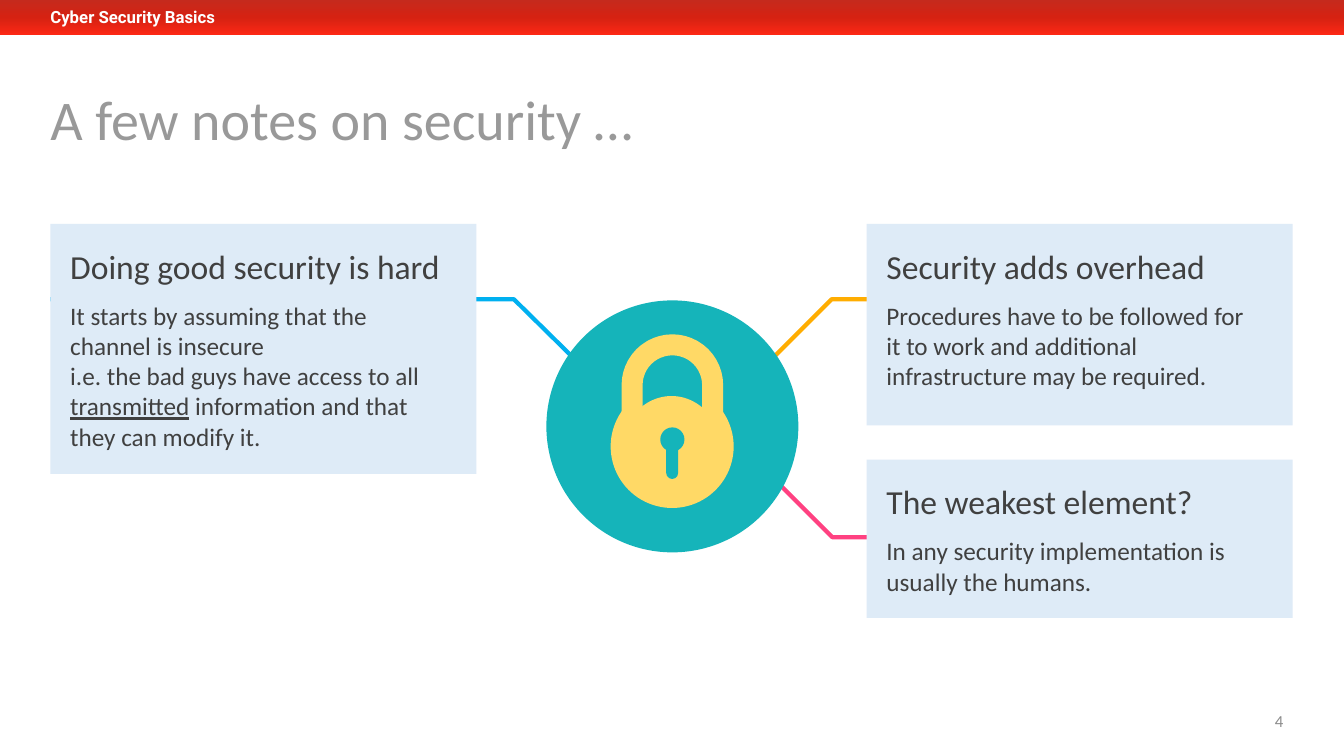
"""Build the slide of security notes around a padlock."""
from copy import deepcopy
from dataclasses import dataclass
from typing import Any, Optional

from pptx import Presentation
from pptx import slide as slides
from pptx import util as u
from pptx.dml import color
from pptx.enum import shapes, text
from pptx.oxml import ns
from pptx.shapes import autoshape, shapetree

Kind = shapes.MSO_SHAPE
Point = tuple[float, float]


@dataclass(frozen=True)
class Theme:
    body_font: str = "Calibri"
    header_font: str = "Roboto"
    bar: tuple[str, ...] = ("C52A1D", "D52212", "FD2815")
    title: str = "999999"
    ink: str = "404040"
    number: str = "8C8C8C"
    white: str = "FFFFFF"
    card: str = "DEEBF7"
    disc: str = "15B4BA"
    lock: str = "FFD966"
    title_size: int = 40
    heading_size: int = 24
    body_size: int = 18
    small_size: int = 12
    wire_width: int = 3
    shackle_width: int = 15


THEME = Theme()


@dataclass(frozen=True)
class Span:
    text: str
    underline: bool = False


@dataclass(frozen=True)
class Para:
    spans: tuple[Span, ...]
    size: int
    colour: str
    font: str = THEME.body_font
    bold: bool = False
    before: float = 0
    line_spacing: float = 1.0
    align: text.PP_ALIGN = text.PP_ALIGN.LEFT


@dataclass(frozen=True)
class Box:
    left: float
    top: float
    width: float
    height: float

    def lengths(self) -> tuple[u.Length, ...]:
        """Return the box as slide lengths."""
        return tuple(map(u.Cm, (self.left, self.top, self.width, self.height)))


@dataclass(frozen=True)
class Part:
    kind: Kind
    box: Box
    fill: Optional[str] = None
    rotation: float = 0
    rounding: Optional[float] = None
    outline: Optional[str] = None


@dataclass(frozen=True)
class Note:
    box: Box
    wire: tuple[Point, ...]
    colour: str
    heading: str
    body: tuple[Span, ...]


NOTES = (
    Note(Box(1.27, 5.64, 10.74, 6.3), ((1.27, 7.54), (12.95, 7.54), (14.99, 9.55)),
         "00B0F0", "Doing good security is hard",
         (Span("It starts by assuming that the channel is insecure \n"
               "i.e. the bad guys have access to all "),
          Span("transmitted", True),
          Span(" information and that they can modify it."))),
    Note(Box(21.84, 5.64, 10.74, 5.08), ((31.65, 7.54), (20.96, 7.54), (17.63, 10.87)),
         "FFAD01", "Security adds overhead",
         (Span("Procedures have to be followed for it to work and additional "
               "infrastructure may be required."),)),
    Note(Box(21.84, 11.58, 10.74, 3.99), ((31.65, 13.54), (20.98, 13.54), (17.65, 10.21)),
         "FF4181", "The weakest element?",
         (Span("In any security implementation is usually the humans."),)),
)

DISC = Part(Kind.OVAL, Box(13.77, 7.57, 6.35, 6.35), THEME.disc)
PADLOCK = (
    Part(Kind.ROUNDED_RECTANGLE, Box(15.93, 8.69, 2.03, 3.73),
         rounding=0.5, outline=THEME.lock),
    Part(Kind.OVAL, Box(15.67, 9.98, 2.51, 2.72), THEME.lock),
    Part(Kind.PIE, Box(15.39, 9.7, 3.1, 3.1), THEME.lock, rotation=315),
    Part(Kind.OVAL, Box(16.64, 10.77, 0.61, 0.61), THEME.disc),
    Part(Kind.ROUNDED_RECTANGLE, Box(16.79, 10.95, 0.3, 1.12), THEME.disc, rounding=0.5),
)


def assign(target: Any, values: dict[str, Any]) -> None:
    """Set each named format value on the target."""
    for name, value in values.items():
        setattr(target, name, value)


def paint(shape: autoshape.Shape, fill: Optional[str],
          outline: Optional[str] = None, width: float = 0) -> None:
    """Give a shape its fill and outline, without a shadow."""
    shape.shadow.inherit = False
    if fill:
        shape.fill.solid()
        shape.fill.fore_color.rgb = color.RGBColor.from_string(fill)
    else:
        shape.fill.background()
    if outline:
        shape.line.color.rgb = color.RGBColor.from_string(outline)
        shape.line.width = u.Pt(width)
    else:
        shape.line.fill.background()


def draw_part(tree: shapetree.SlideShapes, part: Part) -> autoshape.Shape:
    """Draw one preset shape."""
    shape = tree.add_shape(part.kind, *part.box.lengths())
    shape.rotation = part.rotation
    if part.rounding is not None:
        shape.adjustments[0] = part.rounding
    paint(shape, part.fill, part.outline, THEME.shackle_width)
    return shape


def draw_text(tree: shapetree.SlideShapes, box: Box, paras: tuple[Para, ...],
              left: float = 0, right: float = 0.25, edge: float = 0.13,
              anchor: text.MSO_ANCHOR = text.MSO_ANCHOR.TOP) -> None:
    """Draw a wrapped text box with its paragraphs."""
    frame = tree.add_textbox(*box.lengths()).text_frame
    assign(frame, {"word_wrap": True, "vertical_anchor": anchor,
                   "margin_left": u.Cm(left), "margin_right": u.Cm(right),
                   "margin_top": u.Cm(edge), "margin_bottom": u.Cm(edge)})
    for index, para in enumerate(paras):
        paragraph = frame.add_paragraph() if index else frame.paragraphs[0]
        assign(paragraph, {"alignment": para.align, "line_spacing": para.line_spacing,
                           "space_before": u.Pt(para.before)})
        for span in para.spans:
            for line, words in enumerate(span.text.split("\n")):
                if line:
                    paragraph.add_line_break()
                run = paragraph.add_run()
                run.text = words
                assign(run.font, {"name": para.font, "size": u.Pt(para.size),
                                  "bold": para.bold, "underline": span.underline})
                run.font.color.rgb = color.RGBColor.from_string(para.colour)


def draw_bar(page: slides.Slide) -> None:
    """Draw the header band with its three-stop gradient."""
    bar = draw_part(page.shapes, Part(Kind.RECTANGLE, Box(0, 0, 33.87, 0.89), THEME.bar[0]))
    bar.fill.gradient()
    bar.fill.gradient_angle = 270
    stops = bar.element.spPr.find(".//" + ns.qn("a:gsLst"))
    stops.append(deepcopy(stops[0]))
    for index, stop in enumerate(bar.fill.gradient_stops):
        stop.position = index / 2
        stop.color.rgb = color.RGBColor.from_string(THEME.bar[index])


def draw_note(page: slides.Slide, note: Note) -> None:
    """Draw a wire, its card and the card's text as one group."""
    tree = page.shapes.add_group_shape().shapes
    start, *rest = [(u.Cm(x), u.Cm(y)) for x, y in note.wire]
    builder = tree.build_freeform(*start)
    builder.add_line_segments(rest, close=False)
    paint(builder.convert_to_shape(), None, note.colour, THEME.wire_width)
    draw_part(tree, Part(Kind.RECTANGLE, note.box, THEME.card))
    inner = Box(note.box.left, note.box.top + 0.42, 10.11, note.box.height - 0.84)
    draw_text(tree, inner, (
        Para((Span(note.heading),), THEME.heading_size, THEME.ink),
        Para(note.body, THEME.body_size, THEME.ink, before=10)), left=0.5)


def main() -> None:
    """Build and save the deck."""
    deck = Presentation()
    assign(deck, {"slide_width": u.Cm(33.87), "slide_height": u.Cm(19.05)})
    page = deck.slides.add_slide(deck.slide_layouts[6])
    draw_bar(page)
    middle = text.MSO_ANCHOR.MIDDLE
    draw_text(page.shapes, Box(1.27, 2.31, 24.71, 1.55), (
        Para((Span("A few notes on security …"),), THEME.title_size, THEME.title,
             line_spacing=0.9),), right=0, edge=0, anchor=middle)
    draw_text(page.shapes, Box(24.97, 17.65, 7.62, 1.02), (
        Para((Span("4"),), THEME.small_size, THEME.number,
             align=text.PP_ALIGN.RIGHT),), left=0.25, anchor=middle)
    for note in NOTES:
        draw_note(page, note)
    draw_part(page.shapes, DISC)
    padlock = page.shapes.add_group_shape().shapes
    for part in PADLOCK:
        draw_part(padlock, part)
    draw_text(page.shapes, Box(1.27, 0.05, 9.96, 0.76), (
        Para((Span("Cyber Security Basics"),), THEME.small_size, THEME.white,
             font=THEME.header_font, bold=True),))
    deck.save("out.pptx")


if __name__ == "__main__":
    main()
